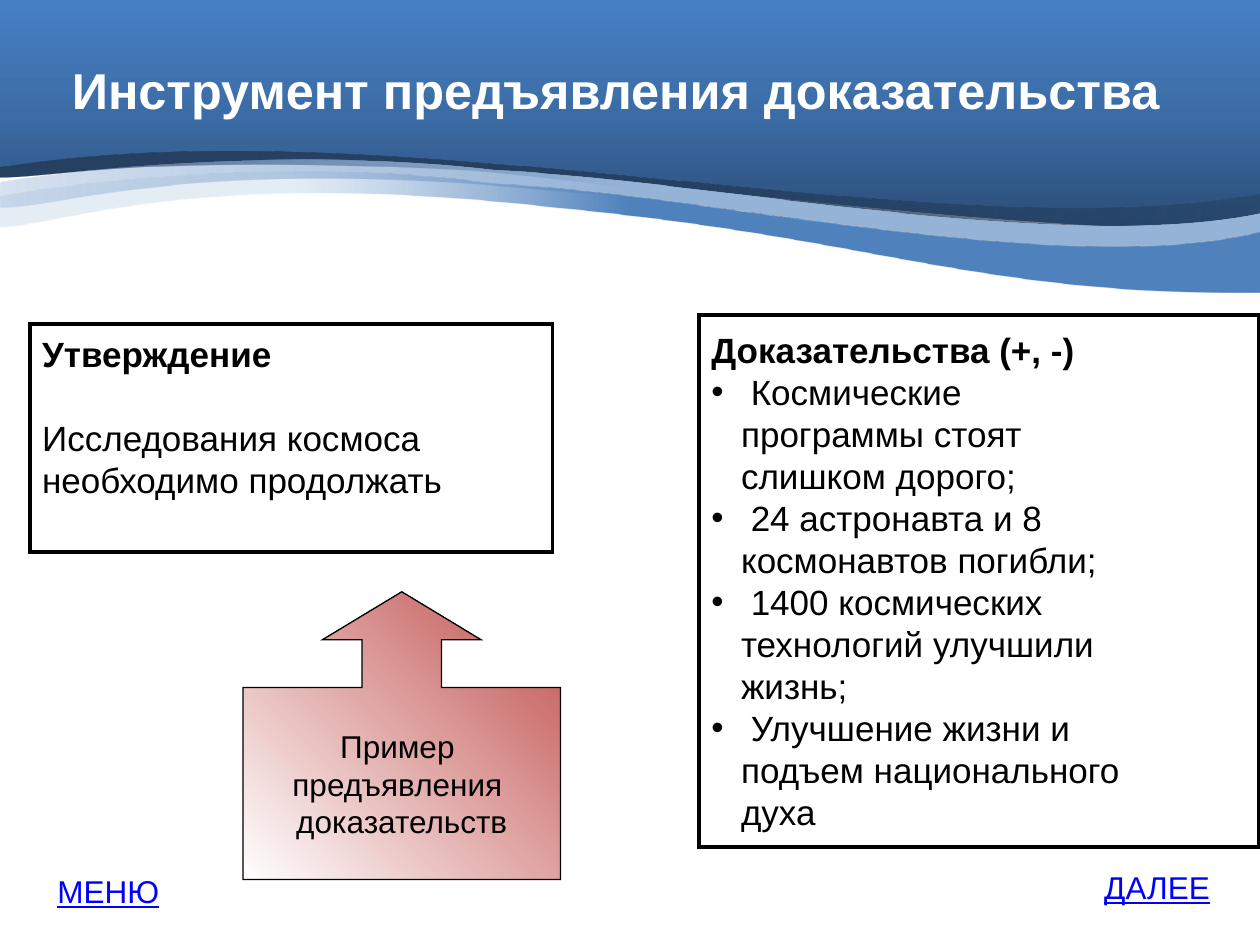
from dataclasses import dataclass

from lxml.etree import SubElement
from pptx import Presentation
from pptx.dml.color import RGBColor
from pptx.enum.shapes import MSO_SHAPE as Preset
from pptx.enum.text import MSO_ANCHOR as Anchor, PP_ALIGN as Align
from pptx.oxml.ns import qn
from pptx.util import Cm, Pt


@dataclass(frozen=True)
class Theme:
    font: str = "Arial"
    ink: str = "000000"
    white: str = "FFFFFF"
    link: str = "0000FF"
    accent: str = "C0504D"
    title_size: float = 28.8
    body_size: float = 20
    label_size: float = 18
    frame: float = 2.25
    hairline: float = 0.75
    # Gradient stops: position in percent, colour, opacity in percent
    sky: tuple = ((0, "2A4C75", 100), (50, "3C6CA6", 100), (100, "4780C5", 100))
    navy: tuple = ((0, "254061", 50), (50, "254061", 100), (100, "254061", 100))
    pale: tuple = ((0, "95B3D7", 100), (50, "95B3D7", 100), (100, "95B3D7", 38))
    blue: tuple = ((0, "4F81BD", 100), (50, "4F81BD", 100), (77, "95B3D7", 23))


THEME = Theme()

# Each wave: stops, angle, start point, then segments in cm
# (one point is a line, three points are a cubic curve).
WAVES = [
    (THEME.sky, 270, (-0.03, -0.03), [
        [(25.4, -0.03)], [(25.4, 4.65)],
        [(16.92, 4.65), (7.32, 2.34), (-0.03, 3.38)]]),
    (THEME.navy, 180, (25.48, 3.89), [
        [(25.48, 4.65)],
        [(19.79, 5.41), (15.95, 3.99), (9.55, 3.45)],
        [(3.07, 3.1), (1.19, 3.58), (0, 3.58)],
        [(0, 3.38)],
        [(8.1, 2.11), (18.97, 5.11), (25.48, 3.89)]]),
    (THEME.pale, 180, (25.4, 4.29), [
        [(25.4, 5.36)],
        [(19.66, 5.41), (17.6, 4.37), (11.23, 3.86)],
        [(3.84, 3.12), (1.19, 4.22), (0, 4.19)],
        [(0, 4.17), (-0.03, 4.01), (0, 3.68)],
        [(1.17, 3.45), (5.87, 2.92), (9.96, 3.43)],
        [(14.17, 3.61), (21.44, 5.16), (25.4, 4.29)]]),
    (THEME.blue, 180, (25.4, 4.67), [
        [(25.4, 5.89)],
        [(19.66, 5.94), (17.6, 4.78), (11.23, 4.19)],
        [(3.84, 3.35), (1.19, 4.57), (0, 4.57)],
        [(0, 4.52), (-0.03, 4.37), (0, 3.96)],
        [(1.17, 3.73), (5.87, 3.12), (9.96, 3.71)],
        [(14.17, 3.89), (21.44, 5.66), (25.4, 4.67)]]),
]

EVIDENCE = [
    " Космические \vпрограммы стоят \vслишком дорого;",
    " 24 астронавта и 8 \vкосмонавтов погибли;",
    " 1400 космических \vтехнологий улучшили \vжизнь;",
    " Улучшение жизни и \vподъем национального \vдуха",
]


def set_all(target, **values):
    for name, value in values.items():
        setattr(target, name, value)


def fill_gradient(shape, stops, angle):
    """Fill along a clockwise angle in degrees."""
    shape.fill.gradient()
    gradient = shape._element.spPr.find(qn("a:gradFill"))
    for child in list(gradient):
        gradient.remove(child)
    stop_list = SubElement(gradient, qn("a:gsLst"))
    for position, color, opacity in stops:
        stop = SubElement(stop_list, qn("a:gs"), pos=str(position * 1000))
        tint = SubElement(stop, qn("a:srgbClr"), val=color)
        if opacity < 100:
            SubElement(tint, qn("a:alpha"), val=str(opacity * 1000))
    SubElement(gradient, qn("a:lin"), ang=str(angle * 60000), scaled="0")


def add_framed(slide, preset, box, line_width):
    shape = slide.shapes.add_shape(preset, *map(Cm, box))
    shape.shadow.inherit = False
    shape.fill.background()
    shape.line.color.rgb = RGBColor.from_string(THEME.ink)
    shape.line.width = Pt(line_width)
    SubElement(shape._element.spPr.find(qn("a:ln")), qn("a:miter"), lim="800000")
    return shape


def write(shape, lines, size, color=THEME.ink, align=Align.LEFT,
          anchor=Anchor.MIDDLE, bold_first=False, underline=False):
    """Write one paragraph per line and return the paragraphs."""
    frame = shape.text_frame
    set_all(frame, word_wrap=True, vertical_anchor=anchor)
    frame.text = "\n".join(lines)
    for index, paragraph in enumerate(frame.paragraphs):
        paragraph.alignment = align
        for run in paragraph.runs:
            set_all(run.font, name=THEME.font, size=Pt(size), underline=underline,
                    bold=bold_first and index == 0)
            run.font.color.rgb = RGBColor.from_string(color)
    return frame.paragraphs


def bend_segments(shape, segments):
    """Turn the straight sides that have control points into cubic curves."""
    sides = list(shape._element.iter(qn("a:lnTo")))
    for side, segment in zip(sides, segments):
        if len(segment) == 1:
            continue
        curve = side.makeelement(qn("a:cubicBezTo"))
        for x, y in segment:
            SubElement(curve, qn("a:pt"), x=str(Cm(x) - shape.left),
                       y=str(Cm(y) - shape.top))
        side.getparent().replace(side, curve)


def add_waves(slide):
    for stops, angle, start, segments in WAVES:
        corners = [(Cm(x), Cm(y)) for x, y in [s[-1] for s in segments]]
        builder = slide.shapes.build_freeform(*map(Cm, start))
        builder.add_line_segments(corners, close=True)
        wave = builder.convert_to_shape()
        bend_segments(wave, segments)
        wave.shadow.inherit = False
        wave.line.fill.background()
        fill_gradient(wave, stops, angle)


def add_title(slide, box):
    title = slide.shapes.add_textbox(*map(Cm, box))
    write(title, ["Инструмент предъявления доказательства"], THEME.title_size,
          THEME.white, Align.CENTER, bold_first=True)


def add_claim(slide, box):
    claim = add_framed(slide, Preset.RECTANGLE, box, THEME.frame)
    claim.text_frame.margin_top = Cm(0.18)
    paragraphs = write(
        claim, ["Утверждение", "Исследования космоса", "необходимо продолжать"],
        THEME.body_size, anchor=Anchor.TOP, bold_first=True)
    paragraphs[1].space_before = Pt(24)


def add_evidence(slide, box):
    evidence = add_framed(slide, Preset.RECTANGLE, box, THEME.frame)
    paragraphs = write(evidence, ["Доказательства (+, -)", *EVIDENCE],
                       THEME.body_size, bold_first=True)
    indent = Cm(0.6)
    for paragraph in paragraphs[1:]:
        properties = paragraph._p.get_or_add_pPr()
        properties.set("marL", str(indent))
        properties.set("indent", str(-indent))
        SubElement(properties, qn("a:buFont"), typeface=THEME.font)
        SubElement(properties, qn("a:buChar"), char="•")


def add_example_arrow(slide, box):
    arrow = add_framed(slide, Preset.UP_ARROW_CALLOUT, box, THEME.hairline)
    for index, ratio in enumerate((0.276, 0.276, 0.167, 0.667)):
        arrow.adjustments[index] = ratio
    fill_gradient(arrow, ((0, THEME.white, 100), (100, THEME.accent, 100)), 315)
    write(arrow, ["Пример ", "предъявления ", "доказательств"],
          THEME.label_size, align=Align.CENTER)


def add_navigation(slide, label, box):
    button = slide.shapes.add_textbox(*map(Cm, box))
    button.text_frame.margin_left = Cm(0.37)
    write(button, [label], THEME.label_size, THEME.link,
          anchor=Anchor.TOP, underline=True)


def main():
    deck = Presentation()
    set_all(deck, slide_width=Cm(25.4), slide_height=Cm(19.05))
    slide = deck.slides.add_slide(deck.slide_layouts[6])
    add_waves(slide)
    add_title(slide, (0.99, 0.6, 22.86, 2.39))
    add_claim(slide, (0.6, 6.53, 10.54, 4.6))
    add_evidence(slide, (14.09, 6.35, 11.3, 10.72))
    add_example_arrow(slide, (4.9, 11.93, 6.4, 5.8))
    add_navigation(slide, "ДАЛЕЕ", (21.89, 17.37, 2.79, 1.02))
    add_navigation(slide, "МЕНЮ", (0.79, 17.46, 2.79, 1.02))
    deck.save("out.pptx")


if __name__ == "__main__":
    main()
